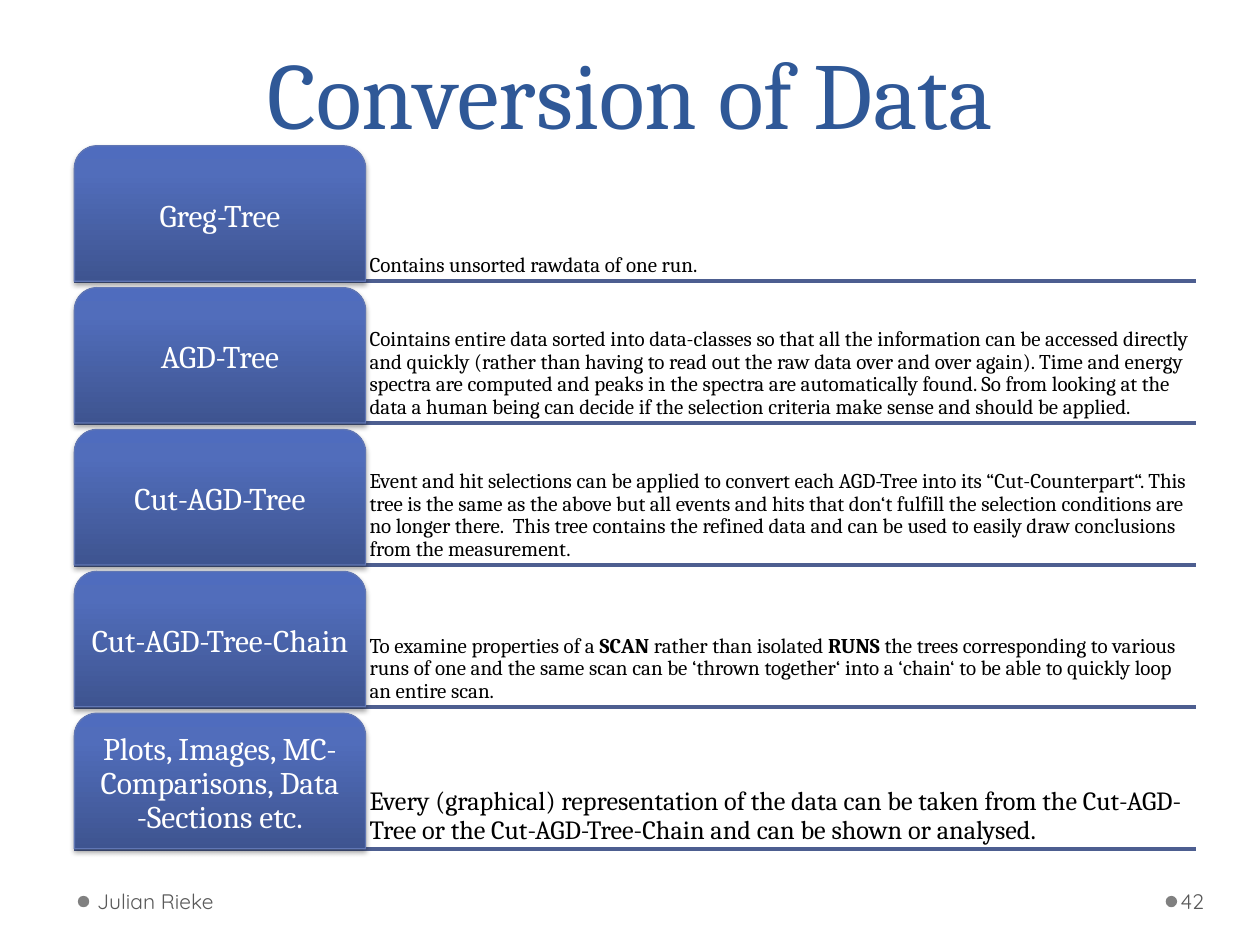
from copy import deepcopy

from lxml.etree import SubElement
from pptx import Presentation
from pptx.dml.color import RGBColor as Rgb
from pptx.enum.shapes import MSO_CONNECTOR as Connector, MSO_SHAPE as Preset
from pptx.enum.text import MSO_ANCHOR as Anchor, PP_ALIGN as Align
from pptx.oxml.ns import qn
from pptx.util import Cm, Pt

COLORS = {
    "title": "2F5897",
    "rule": "4D5E90",
    "card_edge": "6076B4",
    "card_dark": "3E5490",
    "card_mid": "516DBB",
    "card_light": "4F6CBE",
    "card_text": "FFFFFF",
    "body": "000000",
    "footer": "595959",
    "dot": "808080",
    "shadow": "000000",
}

STAGES = [
    ("Greg-Tree", 12, "Contains unsorted rawdata of one run."),
    ("AGD-Tree", 12,
     "Cointains entire data sorted into data-classes so that all the information can be "
     "accessed directly and quickly (rather than having to read out the raw data over and "
     "over again). Time and energy spectra are computed and peaks in the spectra are "
     "automatically found. So from looking at the data a human being can decide if the "
     "selection criteria make sense and should be applied."),
    ("Cut-AGD-Tree", 12,
     "Event and hit selections can be applied to convert each AGD-Tree into its "
     "“Cut-Counterpart“. This tree is the same as the above but all events and hits that "
     "don‘t fulfill the selection conditions are no longer there.  This tree contains the "
     "refined data and can be used to easily draw conclusions from the measurement."),
    ("Cut-AGD-Tree-Chain", 12,
     "To examine properties of a **SCAN **rather than isolated **RUNS **the trees "
     "corresponding to various runs of one and the same scan can be ‘thrown together‘ into "
     "a ‘chain‘ to be able to quickly loop an entire scan."),
    ("Plots, Images, MC-Comparisons, Data -Sections etc.", 15,
     "Every (graphical) representation of the data can be taken from the Cut-AGD-Tree or "
     "the Cut-AGD-Tree-Chain and can be shown or analysed."),
]


def rgb(name):
    return Rgb.from_string(COLORS[name])


class SlideBuilder:
    serif = "Cambria"
    sans = "Quicksand"

    def __init__(self, slide):
        self.slide = slide
        self.shapes = slide.shapes

    def set_text(self, frame, text, size, color, font, anchor, align=Align.LEFT,
                 spacing=0.9, margins=(0.08, 0.08, 0.08, 0.08)):
        frame.word_wrap = True
        frame.vertical_anchor = anchor
        (frame.margin_left, frame.margin_top,
         frame.margin_right, frame.margin_bottom) = map(Cm, margins)
        paragraph = frame.paragraphs[0]
        paragraph.alignment = align
        paragraph.line_spacing = spacing
        paragraph.font.size = Pt(size)
        paragraph.font.name = font
        paragraph.font.color.rgb = rgb(color)
        for index, part in enumerate(text.split("**")):
            run = paragraph.add_run()
            run.text = part
            if index % 2:
                run.font.bold = True

    def text(self, box, text, size, color, font, anchor, **style):
        frame = self.shapes.add_textbox(*map(Cm, box)).text_frame
        self.set_text(frame, text, size, color, font, anchor, **style)

    def rule(self, left, right, y):
        rule = self.shapes.add_connector(
            Connector.STRAIGHT, Cm(left), Cm(y), Cm(right), Cm(y))
        rule.line.color.rgb = rgb("rule")
        rule.line.width = Pt(2.25)
        SubElement(rule._element.spPr, qn("a:effectLst"))

    def dot(self, left, top, size):
        dot = self.shapes.add_shape(Preset.OVAL, *map(Cm, (left, top, size, size)))
        dot.shadow.inherit = False
        dot.fill.solid()
        dot.fill.fore_color.rgb = rgb("dot")
        dot.line.fill.background()

    def card(self, box, label):
        card = self.shapes.add_shape(Preset.ROUND_2_SAME_RECTANGLE, *map(Cm, box))
        card.adjustments[0] = 0.167
        card.line.color.rgb = rgb("card_edge")
        card.line.width = Pt(0.75)
        self.shade(card)
        self.drop_shadow(card)
        self.set_text(card.text_frame, label, 18, "card_text", self.serif, Anchor.MIDDLE,
                      align=Align.CENTER, margins=(0.1, 0.1, 0.1, 0.1))

    def shade(self, card):
        card.fill.gradient()
        card.fill.gradient_angle = 90
        stop_list = card._element.spPr.find(".//" + qn("a:gsLst"))
        stop_list.append(deepcopy(stop_list[-1]))
        shades = (("card_dark", 0), ("card_mid", 0.8), ("card_light", 1))
        for stop, (color, position) in zip(card.fill.gradient_stops, shades):
            stop.color.rgb = rgb(color)
            stop.position = position

    def drop_shadow(self, card):
        card.shadow.inherit = False
        effects = card._element.spPr.find(qn("a:effectLst"))
        shadow = SubElement(effects, qn("a:outerShdw"), blurRad=str(Pt(3.1)),
                            dist=str(Pt(1.8)), dir="5400000", rotWithShape="0")
        color = SubElement(shadow, qn("a:srgbClr"), val=COLORS["shadow"])
        SubElement(color, qn("a:alpha"), val="35000")


def main():
    deck = Presentation()
    deck.slide_width, deck.slide_height = Cm(25.4), Cm(19.05)
    page = SlideBuilder(deck.slides.add_slide(deck.slide_layouts[6]))

    page.text((1.27, 0, 22.86, 3.12), "Conversion of Data", 54, "title", page.serif,
              Anchor.BOTTOM, align=Align.CENTER, spacing=Pt(58),
              margins=(0.25, 0.13, 0.25, 0.13))

    left, right, first_top, pitch = 1.5, 24.1, 2.94, 2.86
    card_width, card_height = 5.87, 2.73
    detail_left = left + card_width
    tops = [first_top + pitch * row for row in range(len(STAGES))]
    for top in tops:
        page.rule(left, right, top + card_height)
    for top, (label, size, detail) in zip(tops, STAGES):
        page.card((left, top, card_width, card_height), label)
        page.text((detail_left, top, right - detail_left, card_height), detail, size,
                  "body", page.serif, Anchor.BOTTOM)

    footers = (
        (1.57, 1.83, 7.9, "Julian Rieke", (0.13, 0.13, 0.25, 0.13)),
        (23.5, 23.72, 1.55, "42", (0.08, 0.13, 0.13, 0.13)),
    )
    for dot_left, text_left, width, text, margins in footers:
        page.dot(dot_left, 18.06, 0.23)
        page.text((text_left, 17.65, width, 1.02), text, 12, "footer", page.sans,
                  Anchor.MIDDLE, spacing=1.0, margins=margins)

    deck.save("out.pptx")


if __name__ == "__main__":
    main()
